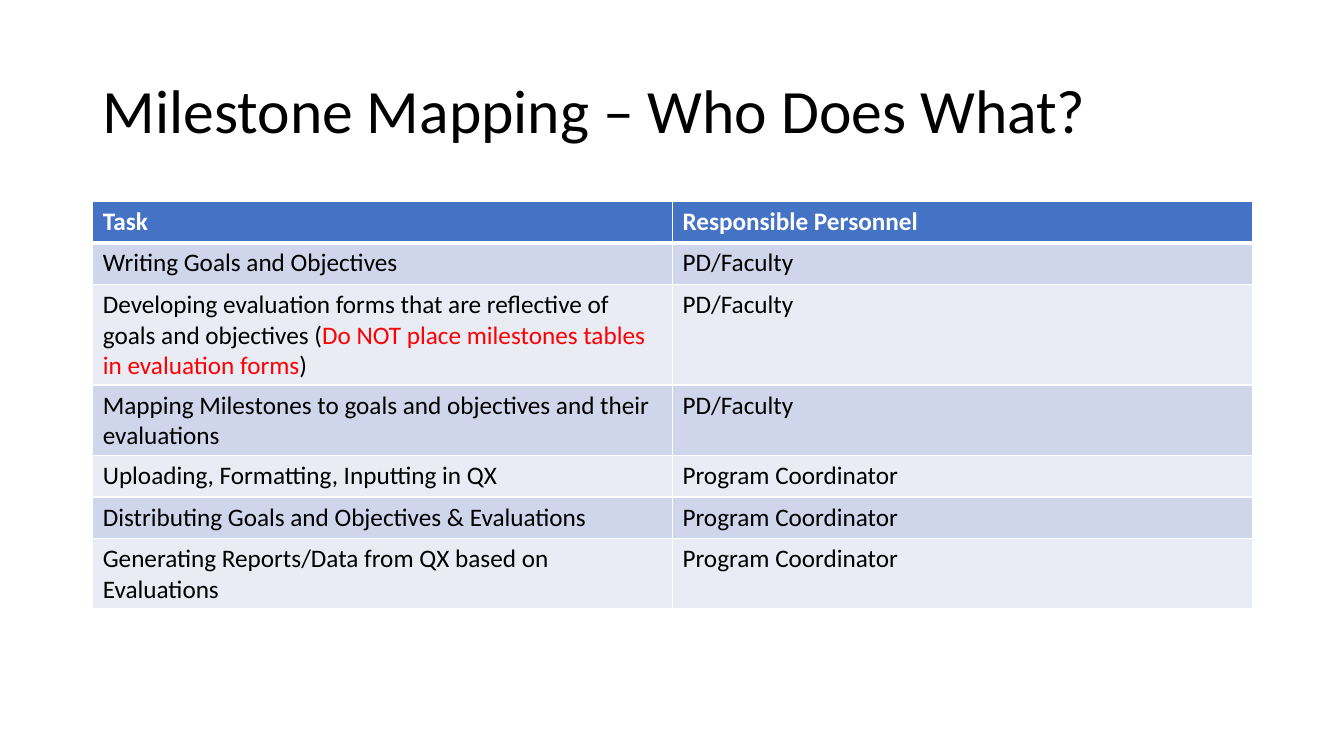
from lxml import etree
from pptx import Presentation
from pptx.dml.color import RGBColor
from pptx.enum import text
from pptx.oxml.ns import qn
from pptx.util import Inches, Pt

HUES = {
    "head": "4472C4",
    "odd": "CFD5EA",
    "even": "E9EBF5",
    "white": "FFFFFF",
    "black": "000000",
    "red": "FF0000",
}

# Each task is a list of (words, colour) runs, paired with who does it.
ROWS = [
    ([("Task", "white")], "Responsible Personnel"),
    ([("Writing Goals and Objectives", "black")], "PD/Faculty"),
    ([("Developing evaluation forms that are reflective of goals and objectives (", "black"),
      ("Do NOT place milestones tables in evaluation forms", "red"),
      (")", "black")], "PD/Faculty"),
    ([("Mapping Milestones to goals and objectives and their evaluations", "black")],
     "PD/Faculty"),
    ([("Uploading, Formatting, Inputting in QX", "black")], "Program Coordinator"),
    ([("Distributing Goals and Objectives & Evaluations", "black")], "Program Coordinator"),
    ([("Generating Reports/Data from QX based on Evaluations", "black")],
     "Program Coordinator"),
]


def add_run(para, words, size, hue, bold=False):
    run = para.add_run()
    run.text = words
    run.font.name = "Calibri"
    run.font.size = Pt(size)
    run.font.bold = bold
    run.font.color.rgb = RGBColor.from_string(HUES[hue])


def add_edge(cell, side, width):
    """Draw a white border on one side (L, R, T or B) of a cell."""
    props = cell._tc.get_or_add_tcPr()
    line = etree.SubElement(props, qn("a:ln" + side), w=str(Pt(width)))
    fill = etree.SubElement(line, qn("a:solidFill"))
    etree.SubElement(fill, qn("a:srgbClr"), val=HUES["white"])


deck = Presentation()
deck.slide_width = Inches(13.33)
deck.slide_height = Inches(7.5)
slide = deck.slides.add_slide(deck.slide_layouts[6])

# Title
title = slide.shapes.add_textbox(Inches(0.92), Inches(0.4), Inches(11.5), Inches(1.45))
frame = title.text_frame
frame.word_wrap = True
frame.vertical_anchor = text.MSO_ANCHOR.MIDDLE
para = frame.paragraphs[0]
para.line_spacing = 0.9
add_run(para, "Milestone Mapping – Who Does What?", 44, "black")

# Task table
high = 0.41
table = slide.shapes.add_table(
    len(ROWS), 2, Inches(0.92), Inches(2), Inches(11.5), Inches(high * len(ROWS))
).table
for col in table.columns:
    col.width = Inches(5.75)

for i, (task, who) in enumerate(ROWS):
    table.rows[i].height = Inches(high)
    top = i == 0
    band = "head" if top else "odd" if i % 2 else "even"
    for j, runs in enumerate([task, [(who, "white" if top else "black")]]):
        cell = table.cell(i, j)
        for side in "LRTB":
            thick = (i, side) in [(0, "B"), (1, "T")]
            add_edge(cell, side, 3 if thick else 1)
        cell.fill.solid()
        cell.fill.fore_color.rgb = RGBColor.from_string(HUES[band])
        for words, hue in runs:
            add_run(cell.text_frame.paragraphs[0], words, 18, hue, top)

deck.save("out.pptx")
